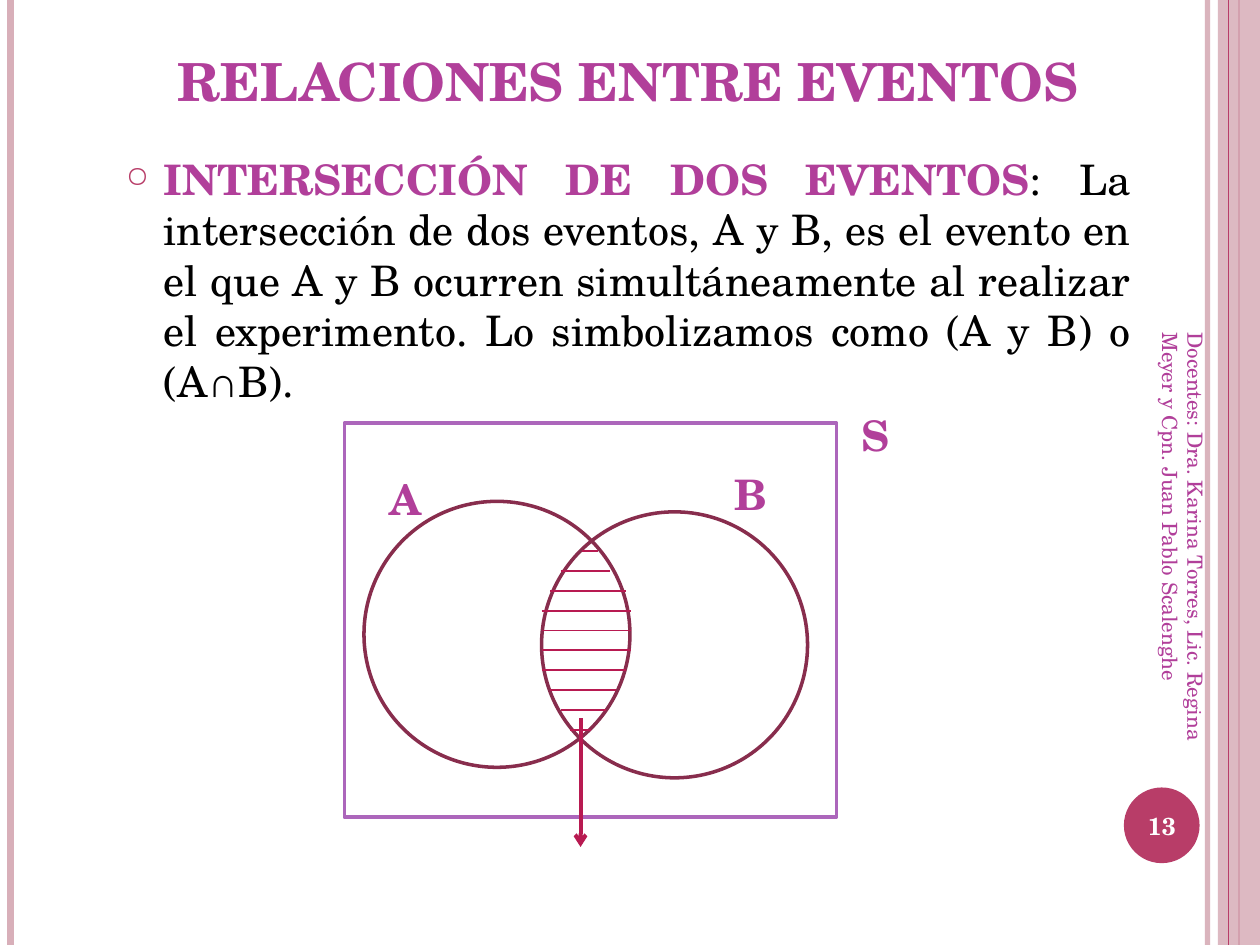
import pptx
import pptx.util
import pptx.dml.color
import pptx.enum.shapes
import pptx.enum.text
import pptx.oxml
from pptx.oxml.ns import nsdecls, qn

Pt = pptx.util.Pt
Kind = pptx.enum.shapes.MSO_SHAPE
Align = pptx.enum.text.PP_ALIGN
Anchor = pptx.enum.text.MSO_ANCHOR

# Content
HUES = {"pale": "D8AFB9", "rose": "B83D68", "plum": "B13F9A", "violet": "AC66BB",
        "wine": "882D4D", "red": "B81A51", "black": "000000", "white": "FFFFFF"}
SERIF = "TeX Gyre Schola"
HEAD = {"size": Pt(24), "name": SERIF, "bold": True, "hue": "plum"}
BODY = {"size": Pt(24), "name": SERIF, "bold": False, "hue": "black"}
TITLE = [("RELACIONES ENTRE EVENTOS", {**HEAD, "size": Pt(30)})]
TEXT = [
    ("INTERSECCIÓN DE DOS EVENTOS", HEAD),
    (": La intersección de dos eventos, A y B, es el evento en el que A y B ocurren "
     "simultáneamente al realizar el experimento. Lo simbolizamos como (A y B) o (A", BODY),
    ("∩", {**BODY, "name": "Times New Roman"}),
    ("B).", BODY),
]
PAGE = [("13", {**HEAD, "size": Pt(14), "hue": "white"})]
STAFF = [("Docentes: Dra. Karina Torres, Lic. Regina Meyer y Cpn. Juan Pablo Scalenghe",
          {**HEAD, "size": Pt(12), "bold": False})]
LABELS = [("S", 485.25, 230.5, 31), ("B", 412.5, 264.25, 32.5), ("A", 215.25, 267.25, 32.5)]

# Slide rules before the side band: x, hue, width, opacity
RULES = [(690, "pale", 3, 93), (6, "pale", 4.5, 100), (708, "rose", 1.5, 100)]
CIRCLES = [(208, 286.5), (309.5, 292.5)]
DIAM = 152
# Hatching: left and right end of each row, evenly spaced downwards
HATCH = [(332.5, 341.5), (320.5, 348.5), (314.5, 358), (309.5, 360.5), (309.5, 360.5),
         (309.5, 360.5), (309.5, 358), (314.5, 352), (320.5, 346.5), (326, 337.5)]
TOP, STEP = 315, 11.33


def paint(color, hue):
    color.rgb = pptx.dml.color.RGBColor.from_string(HUES[hue])


def fade(part, pct):
    if pct < 100:
        for node in part.iter(qn("a:srgbClr")):
            node.append(pptx.oxml.parse_xml(
                f'<a:alpha {nsdecls("a")} val="{pct * 1000}"/>'))


def shape(kind, box, fill=None, line=None, width=2):
    item = slide.shapes.add_shape(kind, *map(Pt, box))
    item.shadow.inherit = False
    if fill:
        item.fill.solid()
        paint(item.fill.fore_color, fill)
    else:
        item.fill.background()
    if line:
        paint(item.line.color, line)
        item.line.width = Pt(width)
    else:
        item.line.fill.background()
    return item


def rule(start, end, hue, width, pct=100):
    item = slide.shapes.add_connector(
        pptx.enum.shapes.MSO_CONNECTOR.STRAIGHT, *map(Pt, start + end))
    paint(item.line.color, hue)
    item.line.width = Pt(width)
    props = item._element.spPr
    fade(props, pct)
    props.append(pptx.oxml.parse_xml(f'<a:effectLst {nsdecls("a")}/>'))
    return item


def write(box, runs, align=Align.LEFT, anchor=Anchor.TOP, wrap=True):
    item = slide.shapes.add_textbox(*map(Pt, box))
    frame = item.text_frame
    frame.word_wrap = wrap
    frame.vertical_anchor = anchor
    para = frame.paragraphs[0]
    para.alignment = align
    for words, form in runs:
        run = para.add_run()
        run.text = words
        for key, value in form.items():
            if key == "hue":
                paint(run.font.color, value)
            else:
                setattr(run.font, key, value)
    return item


deck = pptx.Presentation()
deck.slide_width, deck.slide_height = Pt(720), Pt(540)
slide = deck.slides.add_slide(deck.slide_layouts[6])

# Side bands and page disc
for x, hue, width, pct in RULES:
    rule((x, 0), (x, 540), hue, width, pct)
band = shape(Kind.RECTANGLE, (696, 0, 24, 540), "pale")
fade(band._element.spPr, 87)
rule((702, 0), (702, 540), "rose", 0.75)
shape(Kind.OVAL, (642.25, 450, 43.25, 43.25), "rose")

# Title, body, page number and footer
write((64.8, -22.5, 588.25, 90), TITLE, Align.CENTER, Anchor.BOTTOM)
body = write((64.8, 84.25, 588.25, 383.75), TEXT, Align.JUSTIFY)
para = body.text_frame.paragraphs[0]
para.space_before = Pt(6)
props = para._p.get_or_add_pPr()
props.set("marL", str(Pt(21.6)))
props.set("indent", str(-Pt(21.6)))
for xml in (f'<a:buClr {nsdecls("a")}><a:srgbClr val="{HUES["rose"]}"/></a:buClr>',
            f'<a:buSzPct {nsdecls("a")} val="70000"/>',
            f'<a:buChar {nsdecls("a")} char="○"/>'):
    props.append(pptx.oxml.parse_xml(xml))
write((640, 451.5, 48, 41), PAGE, Align.CENTER, Anchor.MIDDLE)
write((550, 294.5, 252, 28.8), STAFF, anchor=Anchor.MIDDLE).rotation = 90

# Venn diagram
shape(Kind.RECTANGLE, (196.75, 241.75, 281.25, 225.25), "white", "violet")
for x, y in CIRCLES:
    shape(Kind.OVAL, (x, y, DIAM, DIAM), line="wine")
for name, x, y, wide in LABELS:
    write((x, y, wide, 36), [(name, HEAD)], wrap=False)

# Arrow and hatching of the intersection
arrow = rule((331.75, 410.5), (331.75, 484), "red", 2.25)
arrow.line._get_or_add_ln().append(
    pptx.oxml.parse_xml(f'<a:tailEnd {nsdecls("a")} type="arrow"/>'))
for row, (left, right) in enumerate(HATCH):
    y = TOP + row * STEP
    rule((left, y), (right, y), "red", 1)

deck.save("out.pptx")
